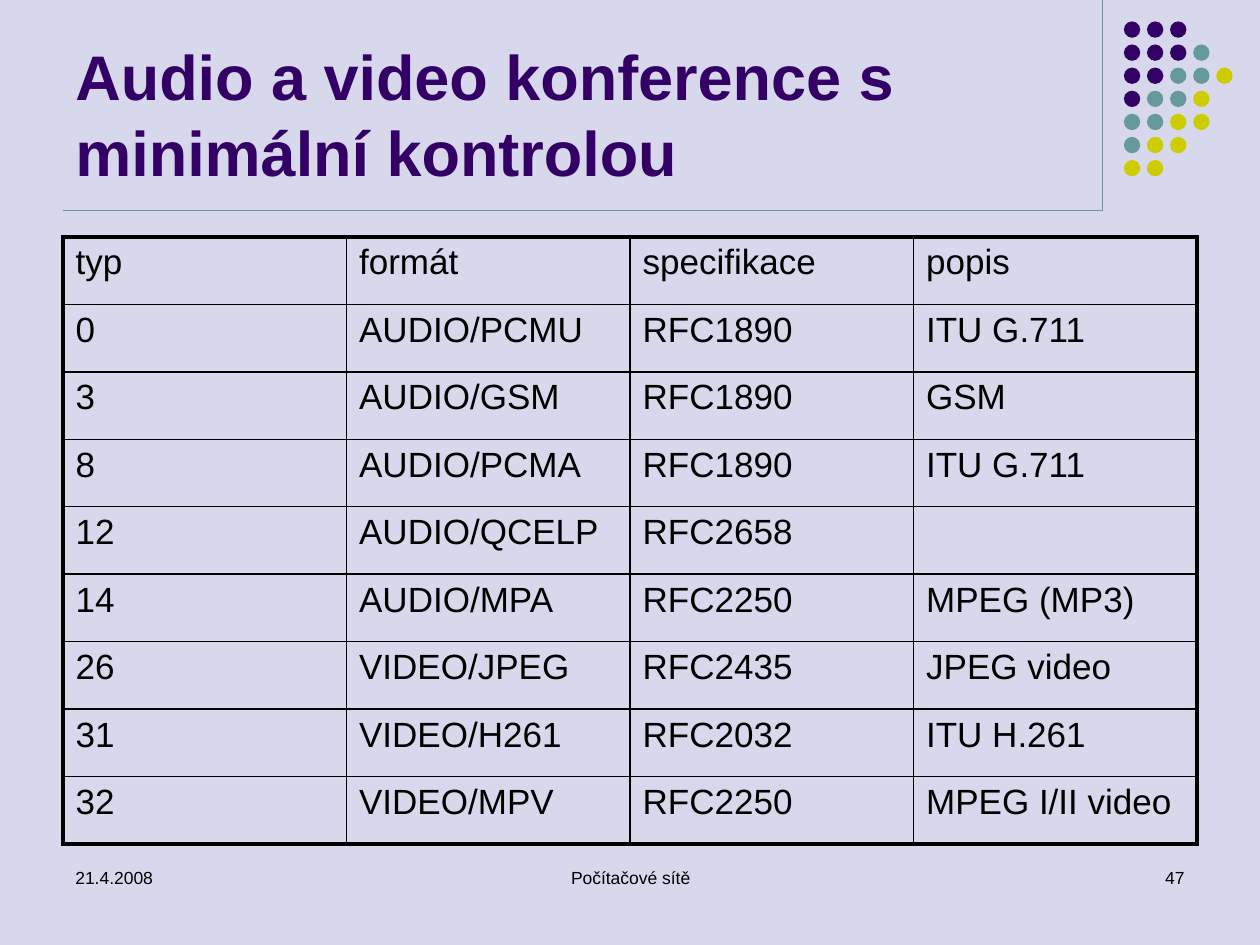
"""Build a slide with a table of audio and video conference formats."""
from dataclasses import dataclass

from lxml import etree
from pptx import Presentation
from pptx.dml.color import RGBColor
from pptx.enum.shapes import MSO_CONNECTOR, MSO_SHAPE
from pptx.enum.text import MSO_ANCHOR, PP_ALIGN
from pptx.oxml.ns import qn
from pptx.slide import Slide
from pptx.table import _Cell
from pptx.util import Inches, Pt

LEFT, CENTER, RIGHT = PP_ALIGN.LEFT, PP_ALIGN.CENTER, PP_ALIGN.RIGHT
TOP, BOTTOM = MSO_ANCHOR.TOP, MSO_ANCHOR.BOTTOM
OVAL, STRAIGHT = MSO_SHAPE.OVAL, MSO_CONNECTOR.STRAIGHT


@dataclass(frozen=True)
class Theme:
    font: str = "Arial"
    background: str = "D8D8EC"
    purple: str = "330066"
    teal: str = "669999"
    yellow: str = "CCCC00"
    black: str = "000000"
    title_size: float = 36
    table_size: float = 20
    footer_size: float = 10
    rule_width: float = 0.75
    inner_border: float = 1
    outer_border: float = 2.25


@dataclass(frozen=True)
class Label:
    text: str
    left: float
    top: float
    width: float
    height: float
    size: float
    color: str
    align: PP_ALIGN = LEFT
    anchor: MSO_ANCHOR = TOP
    bold: bool = False


@dataclass(frozen=True)
class Rule:
    x1: float
    y1: float
    x2: float
    y2: float


THEME = Theme()
LABELS = [
    Label("Audio a video konference s minimální kontrolou", 0.5, 0.13, 8.25, 1.42,
          THEME.title_size, THEME.purple, anchor=BOTTOM, bold=True),
    Label("21.4.2008", 0.5, 6.83, 2.33, 0.5, THEME.footer_size, THEME.black),
    Label("Počítačové sítě", 3.42, 6.83, 3.17, 0.5, THEME.footer_size, THEME.black, CENTER),
    Label("47", 7.17, 6.83, 2.33, 0.5, THEME.footer_size, THEME.black, RIGHT),
]
RULES = [Rule(8.75, 0, 8.75, 1.67), Rule(0.5, 1.67, 8.75, 1.67)]
DOT_ROWS = ["PPP", "PPPT", "PPTTY", "PTTY", "TTYY", "TYY", "YY"]
DOT_COLORS = {"P": THEME.purple, "T": THEME.teal, "Y": THEME.yellow}
DOT_LEFT, DOT_TOP, DOT_SIZE = 8.92, 0.17, 0.13
DOT_PITCH = 1.1 / (len(DOT_ROWS) - 1)
FORMATS = [
    ("typ", "formát", "specifikace", "popis"),
    ("0", "AUDIO/PCMU", "RFC1890", "ITU G.711"),
    ("3", "AUDIO/GSM", "RFC1890", "GSM"),
    ("8", "AUDIO/PCMA", "RFC1890", "ITU G.711"),
    ("12", "AUDIO/QCELP", "RFC2658", ""),
    ("14", "AUDIO/MPA", "RFC2250", "MPEG (MP3)"),
    ("26", "VIDEO/JPEG", "RFC2435", "JPEG video"),
    ("31", "VIDEO/H261", "RFC2032", "ITU H.261"),
    ("32", "VIDEO/MPV", "RFC2250", "MPEG I/II video"),
]


def rgb(color: str) -> RGBColor:
    """Convert a hex string to a colour."""
    return RGBColor.from_string(color)


def add_label(slide: Slide, label: Label) -> None:
    """Add one wrapped text box."""
    s = slide.shapes.add_textbox(Inches(label.left), Inches(label.top),
                                 Inches(label.width), Inches(label.height))
    tf = s.text_frame
    tf.word_wrap = True
    tf.vertical_anchor = label.anchor
    p = tf.paragraphs[0]
    p.text = label.text
    p.alignment = label.align
    p.font.name, p.font.size, p.font.bold = THEME.font, Pt(label.size), label.bold
    p.font.color.rgb = rgb(label.color)


def add_rule(slide: Slide, rule: Rule) -> None:
    """Add one thin teal line."""
    s = slide.shapes.add_connector(STRAIGHT, Inches(rule.x1), Inches(rule.y1),
                                   Inches(rule.x2), Inches(rule.y2))
    s.line.color.rgb = rgb(THEME.teal)
    s.line.width = Pt(THEME.rule_width)
    etree.SubElement(s._element.spPr, qn("a:effectLst"))


def add_dots(slide: Slide) -> None:
    """Add the grid of coloured dots."""
    for row, codes in enumerate(DOT_ROWS):
        for col, code in enumerate(codes):
            s = slide.shapes.add_shape(
                OVAL, Inches(DOT_LEFT + col * DOT_PITCH), Inches(DOT_TOP + row * DOT_PITCH),
                Inches(DOT_SIZE), Inches(DOT_SIZE))
            s.shadow.inherit = False
            s.fill.solid()
            s.fill.fore_color.rgb = rgb(DOT_COLORS[code])
            s.line.fill.background()


def set_borders(cell: _Cell, outer: dict[str, bool]) -> None:
    """Draw the cell borders, thicker on the outer sides."""
    tc_pr = cell._tc.get_or_add_tcPr()
    for side, is_outer in outer.items():
        width = THEME.outer_border if is_outer else THEME.inner_border
        ln = etree.SubElement(tc_pr, qn(f"a:ln{side}"), w=str(Pt(width)))
        fill = etree.SubElement(ln, qn("a:solidFill"))
        etree.SubElement(fill, qn("a:srgbClr"), val=THEME.black)


def add_formats_table(slide: Slide) -> None:
    """Add the table of formats."""
    last_row, last_col = len(FORMATS) - 1, len(FORMATS[0]) - 1
    table = slide.shapes.add_table(len(FORMATS), len(FORMATS[0]), Inches(0.5), Inches(1.88),
                                   Inches(9), Inches(4.82)).table
    table.first_row = table.horz_banding = False
    for i, values in enumerate(FORMATS):
        for j, value in enumerate(values):
            cell = table.cell(i, j)
            set_borders(cell, {"L": j == 0, "R": j == last_col, "T": i == 0, "B": i == last_row})
            cell.fill.background()
            p = cell.text_frame.paragraphs[0]
            p.text = value
            p.font.name, p.font.size = THEME.font, Pt(THEME.table_size)
            p.font.color.rgb = rgb(THEME.black)


def main() -> None:
    """Build and save the presentation."""
    prs = Presentation()
    prs.slide_width, prs.slide_height = Inches(10), Inches(7.5)
    slide = prs.slides.add_slide(prs.slide_layouts[6])
    slide.background.fill.solid()
    slide.background.fill.fore_color.rgb = rgb(THEME.background)
    for rule in RULES:
        add_rule(slide, rule)
    add_dots(slide)
    for label in LABELS:
        add_label(slide, label)
    add_formats_table(slide)
    prs.save("out.pptx")


if __name__ == "__main__":
    main()
